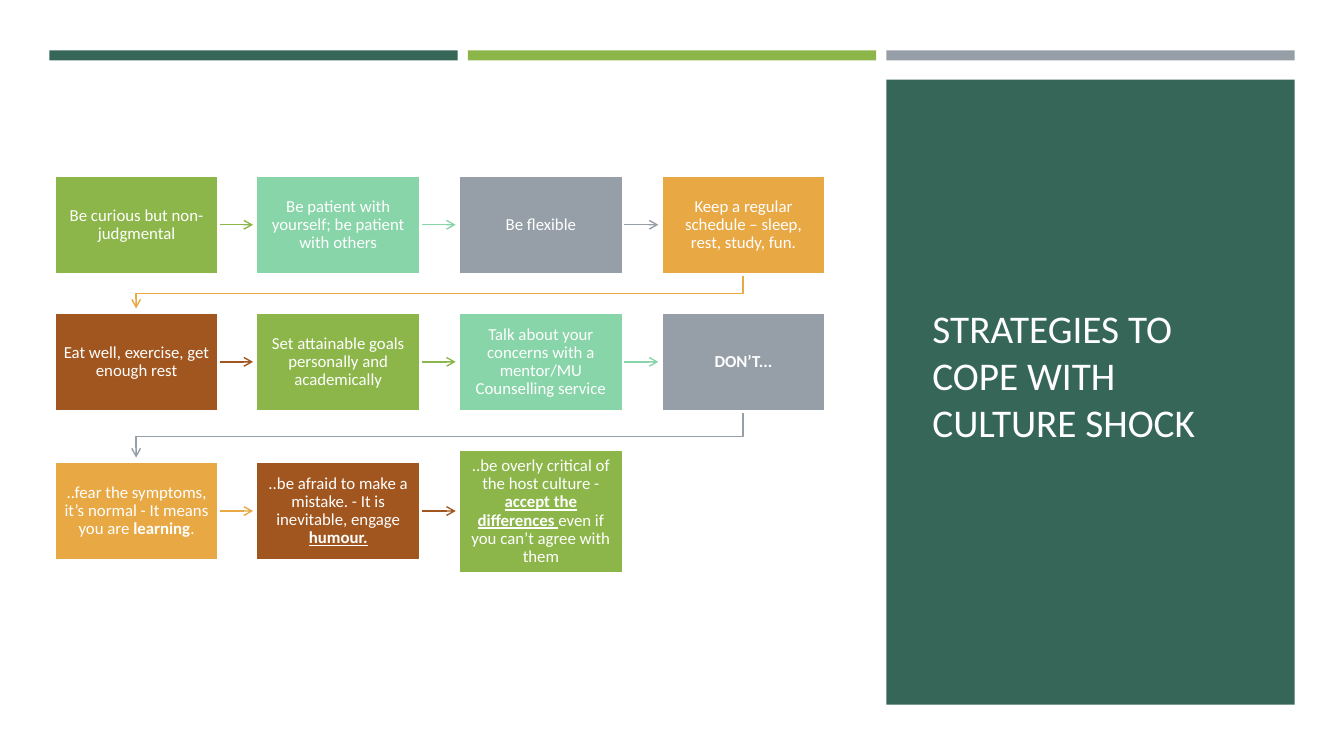
from dataclasses import dataclass
from itertools import pairwise
from typing import NamedTuple

from lxml import etree
from pptx import Presentation
from pptx.dml.color import RGBColor
from pptx.enum.shapes import MSO_CONNECTOR, MSO_SHAPE
from pptx.enum.text import MSO_ANCHOR, PP_ALIGN
from pptx.oxml.ns import qn
from pptx.shapes.autoshape import Shape
from pptx.slide import Slide
from pptx.text.text import TextFrame
from pptx.util import Pt

RECTANGLE = MSO_SHAPE.RECTANGLE
STRAIGHT = MSO_CONNECTOR.STRAIGHT
CENTER = PP_ALIGN.CENTER
LEFT = PP_ALIGN.LEFT
MIDDLE = MSO_ANCHOR.MIDDLE
RIGHT_SIDE = 3

EMU_PER_PX = 9144


@dataclass(frozen=True)
class Theme:
    font: str = "Calibri"
    title_size: int = 28
    step_size: int = 12
    white: str = "FFFFFF"
    title: str = "FFFEFF"
    dark: str = "366658"
    green: str = "8CB64A"
    mint: str = "88D5A9"
    gray: str = "969FA7"
    orange: str = "E8A844"
    brown: str = "A1561F"


class Words(NamedTuple):
    text: str
    bold: bool = False
    underline: bool = False


class Box(NamedTuple):
    left: int
    top: int
    width: int
    height: int


class Step(NamedTuple):
    words: tuple[Words, ...]
    height: int = 98


class PlacedStep(NamedTuple):
    box: Box
    shape: Shape
    color: str


THEME = Theme()
STEP_COLORS = (THEME.green, THEME.mint, THEME.gray, THEME.orange, THEME.brown)
BAR_COLORS = (THEME.dark, THEME.green, THEME.gray)
COLUMNS = 4
ROW_CENTERS = (223, 359, 507)
STEP_WIDTH = 163
STEPS = (
    Step((Words("Be curious but non-judgmental"),)),
    Step((Words("Be patient with yourself; be patient with others"),)),
    Step((Words("Be flexible"),)),
    Step((Words("Keep a regular schedule – sleep, rest, study, fun."),)),
    Step((Words("Eat well, exercise, get enough rest"),)),
    Step((Words("Set attainable goals personally and academically"),)),
    Step((Words("Talk about your concerns with a mentor/MU Counselling service"),)),
    Step((Words("DON’T...", bold=True),)),
    Step((
        Words("..fear the symptoms, it’s normal - It means you are "),
        Words("learning", bold=True),
        Words("."),
    )),
    Step((
        Words("..be afraid to make a mistake. - It is inevitable, engage "),
        Words("humour.", bold=True, underline=True),
    )),
    Step((
        Words("..be overly critical of the host culture - "),
        Words("accept the differences ", bold=True, underline=True),
        Words("even if you can’t agree with them"),
    ), height=123),
)


def px(length: int) -> int:
    """Turn px into EMU."""
    return length * EMU_PER_PX


def rgb(color: str) -> RGBColor:
    """Turn a hex value into a colour."""
    return RGBColor.from_string(color)


def add_rectangle(slide: Slide, box: Box, color: str) -> Shape:
    """Add a filled rectangle without outline or shadow."""
    shape = slide.shapes.add_shape(RECTANGLE, *map(px, box))
    shape.shadow.inherit = False
    shape.fill.solid()
    shape.fill.fore_color.rgb = rgb(color)
    shape.line.fill.background()
    return shape


def write(frame: TextFrame, words: tuple[Words, ...], size: int, color: str,
          alignment: PP_ALIGN, spacing: float) -> None:
    """Write one vertically centred paragraph, run by run."""
    frame.word_wrap = True
    frame.vertical_anchor = MIDDLE
    paragraph = frame.paragraphs[0]
    paragraph.alignment = alignment
    paragraph.line_spacing = spacing
    for part in words:
        run = paragraph.add_run()
        run.text = part.text
        font = run.font
        font.name = THEME.font
        font.size = Pt(size)
        font.bold = part.bold
        font.underline = part.underline
        font.color.rgb = rgb(color)


def add_step(slide: Slide, index: int, step: Step) -> PlacedStep:
    """Add a step at its place in the grid."""
    row, column = divmod(index, COLUMNS)
    box = Box(54 + column * 602 // 3, ROW_CENTERS[row] - step.height // 2,
              STEP_WIDTH, step.height)
    color = STEP_COLORS[index % len(STEP_COLORS)]
    shape = add_rectangle(slide, box, color)
    shape.line.color.rgb = rgb(THEME.white)
    shape.line.width = Pt(2)
    frame = shape.text_frame
    frame.margin_left = frame.margin_right = px(8)
    frame.margin_top = frame.margin_bottom = px(8)
    write(frame, step.words, THEME.step_size, THEME.white, CENTER, 0.9)
    return PlacedStep(box, shape, color)


def add_arrow(slide: Slide, start: PlacedStep, end: PlacedStep) -> None:
    """Lead from one step to the next, behind the first."""
    if start.box.left < end.box.left:
        middle = start.box.top + start.box.height // 2
        arrow = slide.shapes.add_connector(
            STRAIGHT, px(start.box.left + STEP_WIDTH), px(middle),
            px(end.box.left - 3), px(middle))
        arrow.begin_connect(start.shape, RIGHT_SIDE)
    else:
        start_x = start.box.left + STEP_WIDTH // 2
        end_x = end.box.left + STEP_WIDTH // 2
        start_y = start.box.top + start.box.height
        end_y = end.box.top - 4
        turn_y = (start_y + end_y) // 2 + 2
        builder = slide.shapes.build_freeform(start_x, start_y, scale=EMU_PER_PX)
        builder.add_line_segments(
            [(start_x, turn_y), (end_x, turn_y), (end_x, end_y)], close=False)
        arrow = builder.convert_to_shape()
        arrow.fill.background()
    arrow.line.color.rgb = rgb(start.color)
    arrow.line.width = Pt(1)
    outline = arrow.element.spPr.find(qn("a:ln"))
    etree.SubElement(outline, qn("a:tailEnd"), type="arrow")
    etree.SubElement(arrow.element.spPr, qn("a:effectLst"))
    start.shape.element.addprevious(arrow.element)


def main() -> None:
    """Build and save the slide."""
    presentation = Presentation()
    presentation.slide_width = px(1333)
    presentation.slide_height = px(750)
    slide = presentation.slides.add_slide(presentation.slide_layouts[6])

    for column, color in enumerate(BAR_COLORS):
        add_rectangle(slide, Box(49 + column * 415, 50, 405, 10), color)
    add_rectangle(slide, Box(879, 79, 405, 620), THEME.dark)
    title = slide.shapes.add_textbox(*map(px, Box(915, 114, 334, 515)))
    write(title.text_frame, (Words("STRATEGIES TO COPE WITH CULTURE SHOCK"),),
          THEME.title_size, THEME.title, LEFT, 1.0)

    placed = [add_step(slide, index, step) for index, step in enumerate(STEPS)]
    for start, end in pairwise(placed):
        add_arrow(slide, start, end)
    presentation.save("out.pptx")


if __name__ == "__main__":
    main()
